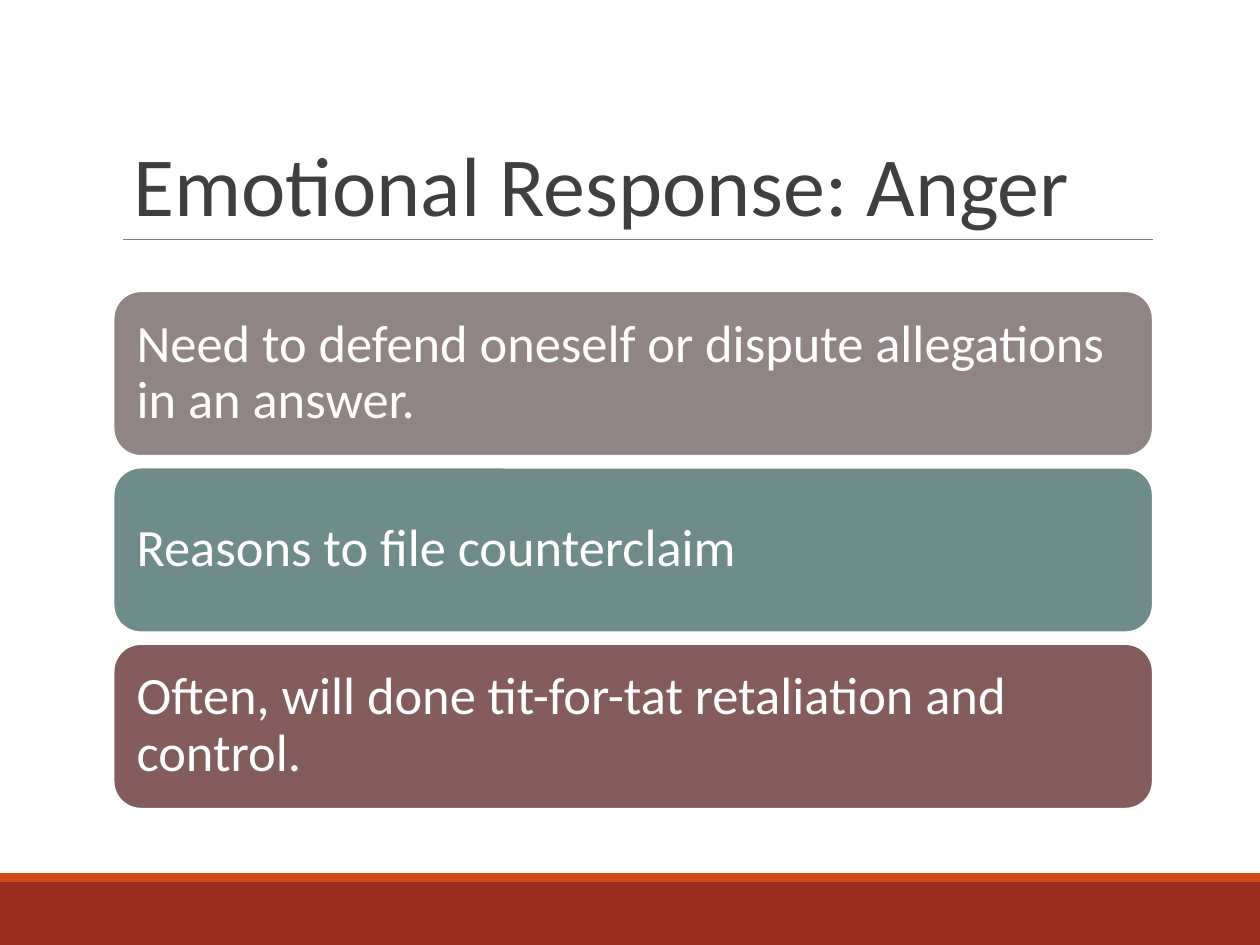
from pptx import Presentation
from pptx.dml.color import RGBColor
from pptx.enum import shapes, text
from pptx.oxml.ns import qn
from pptx.util import Inches, Pt

TITLE = "Emotional Response: Anger"
CARDS = [
    ("Need to defend oneself or dispute allegations in an answer.", "918485"),
    ("Reasons to file counterclaim", "6E8C89"),
    ("Often, will done tit-for-tat retaliation and control.", "845C5C"),
]
BANDS = [(7, 0.5, "9B2D1F"), (6.93, 0.07, "D34817")]  # top, height, fill
LEFT, WIDTH = 0.9, 8.25
TOP, HIGH, STEP = 2.31, 1.31, 1.4


def color(code):
    return RGBColor.from_string(code)


def add_box(slide, kind, area, fill):
    box = slide.shapes.add_shape(kind, *map(Inches, area))
    box.shadow.inherit = False
    box.fill.solid()
    box.fill.fore_color.rgb = color(fill)
    box.line.fill.background()
    return box


def set_text(box, words, size, code, space, anchor, pads):
    frame = box.text_frame
    frame.word_wrap = True
    frame.vertical_anchor = anchor
    (frame.margin_left, frame.margin_top,
     frame.margin_right, frame.margin_bottom) = map(Inches, pads)
    frame.text = words
    para = frame.paragraphs[0]
    para.alignment = text.PP_ALIGN.LEFT
    para.line_spacing = space
    font = para.runs[0].font
    font.name, font.size = "Calibri", Pt(size)
    font.color.rgb = color(code)


def main():
    deck = Presentation()
    deck.slide_width, deck.slide_height = Inches(10), Inches(7.5)
    slide = deck.slides.add_slide(deck.slide_layouts[6])

    # Footer bands
    for top, high, fill in BANDS:
        add_box(slide, shapes.MSO_SHAPE.RECTANGLE, (0, top, 10, high), fill)

    # Title and its rule
    rule = slide.shapes.add_connector(
        shapes.MSO_CONNECTOR.STRAIGHT, *map(Inches, (0.98, 1.9, 9.15, 1.9)))
    rule.line.color.rgb = color("7F7F7F")
    rule.line.width = Pt(0.75)
    props = rule._element.spPr
    props.append(props.makeelement(qn("a:effectLst"), {}))
    title = slide.shapes.add_textbox(*map(Inches, (LEFT, 0.31, WIDTH, 1.59)))
    set_text(title, TITLE, 48, "3F3F3F", 0.85,
             text.MSO_ANCHOR.BOTTOM, (0.16, 0.05, 0.1, 0.05))

    # Stacked cards
    for row, (words, fill) in enumerate(CARDS):
        card = add_box(slide, shapes.MSO_SHAPE.ROUNDED_RECTANGLE,
                       (LEFT, TOP + row * STEP, WIDTH, HIGH), fill)
        card.line.color.rgb = color("FFFFFF")
        card.line.width = Pt(1.25)
        set_text(card, words, 30, "FFFFFF", 0.9,
                 text.MSO_ANCHOR.MIDDLE, (0.12,) * 4)

    deck.save("out.pptx")


if __name__ == "__main__":
    main()
